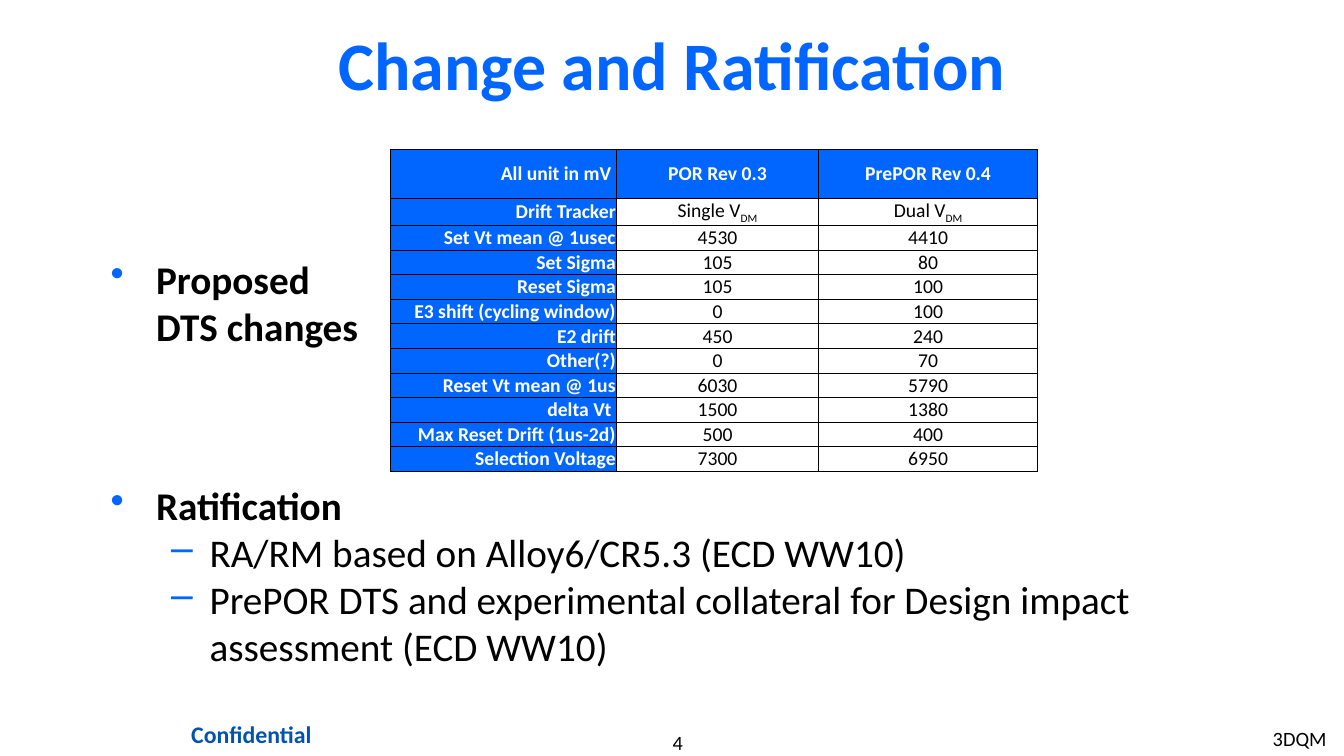
from lxml import etree
from pptx import Presentation
from pptx.dml.color import RGBColor
from pptx.enum.text import MSO_ANCHOR, MSO_AUTO_SIZE, PP_ALIGN
from pptx.oxml.ns import qn
from pptx.util import Pt

LEFT, MID, RIGHT = PP_ALIGN.LEFT, PP_ALIGN.CENTER, PP_ALIGN.RIGHT
CENTRE = MSO_ANCHOR.MIDDLE
NO_FIT = MSO_AUTO_SIZE.NONE
FONT = "Calibri"
COLOURS = {"blue": "0066FF", "navy": "0054B0", "black": "000000", "white": "FFFFFF"}

HEAD = ["All unit in mV ", "POR Rev 0.3", "PrePOR Rev 0.4"]
ROWS = [
    ["Drift Tracker", "Single V|DM", "Dual V|DM"],
    ["Set Vt mean @ 1usec", "4530", "4410"],
    ["Set Sigma", "105", "80"],
    ["Reset Sigma", "105", "100"],
    ["E3 shift (cycling window)", "0", "100"],
    ["E2 drift", "450", "240"],
    ["Other(?)", "0", "70"],
    ["Reset Vt mean @ 1us", "6030", "5790"],
    ["delta Vt ", "1500", "1380"],
    ["Max Reset Drift (1us-2d)", "500", "400"],
    ["Selection Voltage", "7300", "6950"],
]
WIDTHS = [161.8, 144.4, 156.4]
HEIGHTS = [35, 19.3] + [17.5] * (len(ROWS) - 1)

# text, level, space before
POINTS = [
    ("Proposed\vDTS changes", 0, 0),
    ("Ratification", 0, 94.5),
    ("RA/RM based on Alloy6/CR5.3 (ECD WW10)", 1, 0),
    ("PrePOR DTS and experimental collateral for Design impact "
     "assessment (ECD WW10)", 1, 0),
]
# bullet, left margin, hanging indent
LEVELS = [("•", 32.4, 32.4), ("–", 70.6, 27.4)]


def add_run(para, text, size, colour, bold=False):
    run = para.add_run()
    run.text = text
    run.font.name = FONT
    run.font.size = Pt(size)
    run.font.bold = bold
    run.font.color.rgb = RGBColor.from_string(COLOURS[colour])
    return run


def set_frame(frame, side, top):
    frame.word_wrap = True
    frame.auto_size = NO_FIT
    frame.margin_left = frame.margin_right = Pt(side)
    frame.margin_top = frame.margin_bottom = Pt(top)


def add_box(slide, left, top, width, height, side=7.2, inset=3.6):
    box = slide.shapes.add_textbox(Pt(left), Pt(top), Pt(width), Pt(height))
    set_frame(box.text_frame, side, inset)
    return box.text_frame


def add_label(slide, place, text, size, colour, align, bold=False):
    para = add_box(slide, *place).paragraphs[0]
    para.alignment = align
    add_run(para, text, size, colour, bold)


def add_title(slide, text):
    title = slide.shapes.title
    title.left, title.top = Pt(72), Pt(12.2)
    title.width, title.height = Pt(816), Pt(66.2)
    frame = title.text_frame
    set_frame(frame, 7.2, 3.6)
    frame.vertical_anchor = CENTRE
    para = frame.paragraphs[0]
    para.alignment = MID
    add_run(para, text, 48.5, "blue", True)


def set_bullet(para, level):
    mark, margin, hang = LEVELS[level]
    props = para._p.get_or_add_pPr()
    props.set("marL", str(Pt(margin)))
    props.set("indent", str(-Pt(hang)))
    tint = etree.SubElement(props, qn("a:buClr"))
    etree.SubElement(tint, qn("a:srgbClr"), val=COLOURS["blue"])
    etree.SubElement(props, qn("a:buChar"), char=mark)


def add_points(slide):
    frame = add_box(slide, 72, 178.5, 816, 301.5)
    for i, (text, level, space) in enumerate(POINTS):
        para = frame.add_paragraph() if i else frame.paragraphs[0]
        para.level = level
        para.space_before = Pt(space)
        set_bullet(para, level)
        for j, line in enumerate(text.split("\v")):
            if j:
                para.add_line_break()
            add_run(para, line, 28, "black", level == 0)


def set_borders(cell):
    props = cell._tc.get_or_add_tcPr()
    for side in "LRTB":
        line = etree.SubElement(props, qn(f"a:ln{side}"), w=str(Pt(0.5)))
        fill = etree.SubElement(line, qn("a:solidFill"))
        etree.SubElement(fill, qn("a:srgbClr"), val=COLOURS["black"])


def fill_cell(cell, text, dark, align):
    """Format a cell; text after a bar is set as subscript."""
    set_borders(cell)
    if dark:
        cell.fill.solid()
        cell.fill.fore_color.rgb = RGBColor.from_string(COLOURS["blue"])
    else:
        cell.fill.background()
    cell.margin_left = cell.margin_right = cell.margin_top = Pt(0.5)
    cell.margin_bottom = Pt(0)
    cell.vertical_anchor = CENTRE
    para = cell.text_frame.paragraphs[0]
    para.alignment = align
    for i, part in enumerate(text.split("|")):
        run = add_run(para, part, 14, "white" if dark else "black", dark)
        if i:
            run._r.get_or_add_rPr().set("baseline", "-25000")


def add_grid(slide):
    data = [HEAD] + ROWS
    table = slide.shapes.add_table(
        len(data), len(HEAD), Pt(278.6), Pt(106.6),
        Pt(sum(WIDTHS)), Pt(sum(HEIGHTS))).table
    table.first_row = True
    table.first_col = True
    table.horz_banding = False
    for col, width in zip(table.columns, WIDTHS):
        col.width = Pt(width)
    for r, texts in enumerate(data):
        table.rows[r].height = Pt(HEIGHTS[r])
        for c, text in enumerate(texts):
            fill_cell(table.cell(r, c), text, r == 0 or c == 0, MID if c else RIGHT)


def main():
    deck = Presentation()
    deck.slide_width, deck.slide_height = Pt(960), Pt(540)
    slide = deck.slides.add_slide(deck.slide_layouts[5])
    add_title(slide, "Change and Ratification")
    add_points(slide)
    add_grid(slide)
    add_label(slide, (400.3, 521.3, 167.8, 17.5, 0, 0), "4", 14.5, "black", MID)
    add_label(slide, (902, 515, 54, 25), "3DQM", 14.5, "black", LEFT)
    add_label(slide, (111.6, 509.8, 136, 29.5, 8.6, 4.3),
              "Confidential", 17, "navy", MID, True)
    deck.save("out.pptx")


if __name__ == "__main__":
    main()
